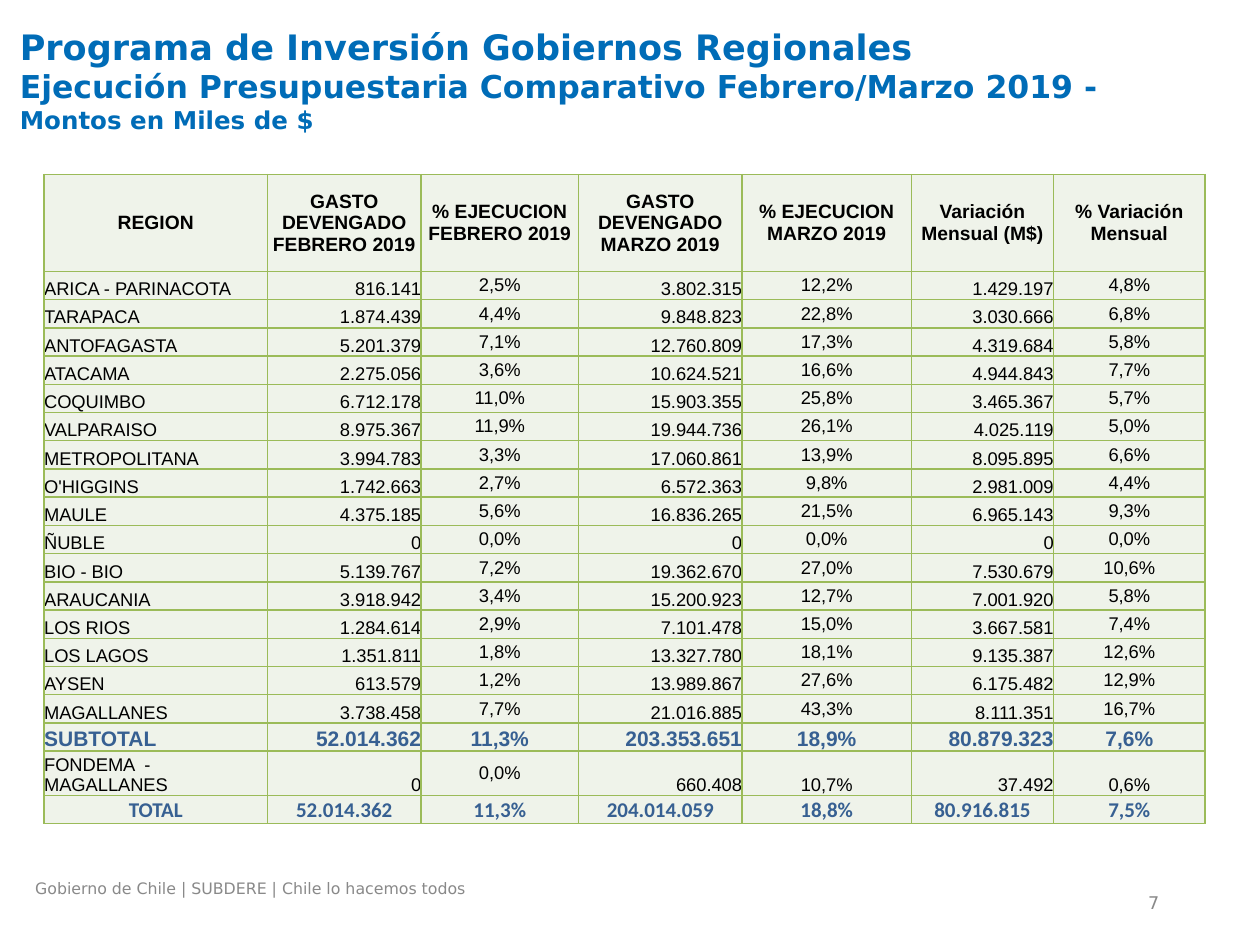
from dataclasses import dataclass
from typing import Optional

import lxml.etree
import pptx
import pptx.dml.color
import pptx.enum.text
import pptx.oxml.ns
import pptx.util

Cm = pptx.util.Cm
Align = pptx.enum.text.PP_ALIGN
Anchor = pptx.enum.text.MSO_ANCHOR


@dataclass(frozen=True)
class Theme:
    title_color: str = "006CB7"
    footer_color: str = "898989"
    text_color: str = "000000"
    total_color: str = "376092"
    cell_fill: str = "EFF3EA"
    border_color: str = "9BBB59"
    border_width: float = 1
    slide_font: str = "DejaVu Sans"
    table_font: str = "Arial"
    total_font: str = "Calibri"
    title_size: float = 20
    subtitle_size: float = 18
    units_size: float = 14
    footer_size: float = 9
    number_size: float = 10
    header_size: float = 11
    body_size: float = 10.5
    total_size: float = 12


THEME = Theme()


@dataclass(frozen=True)
class TextStyle:
    font: str
    size: float
    color: str
    bold: bool = False


@dataclass(frozen=True)
class TextBox:
    left: float
    top: float
    width: float
    height: float
    text: str
    style: TextStyle
    align: Align = Align.LEFT
    anchor: Anchor = Anchor.TOP


@dataclass(frozen=True)
class RowStyle:
    text: TextStyle
    aligns: tuple
    anchors: tuple


# Styles
TITLE = TextStyle(THEME.slide_font, THEME.title_size, THEME.title_color, True)
SUBTITLE = TextStyle(THEME.slide_font, THEME.subtitle_size, THEME.title_color, True)
UNITS = TextStyle(THEME.slide_font, THEME.units_size, THEME.title_color, True)
FOOTER = TextStyle(THEME.slide_font, THEME.footer_size, THEME.footer_color)
NUMBER = TextStyle(THEME.slide_font, THEME.number_size, THEME.footer_color)
BODY = TextStyle(THEME.table_font, THEME.body_size, THEME.text_color)

CENTERED = (Align.CENTER,) * 7
BY_COLUMN = (Align.LEFT,) + (Align.RIGHT, Align.CENTER) * 3
MIDDLE = (Anchor.MIDDLE,) * 7
BOTTOM = (Anchor.BOTTOM,) * 7
PERCENT_MIDDLE = (Anchor.BOTTOM,) + (Anchor.BOTTOM, Anchor.MIDDLE) * 3
FIRST_PERCENT_MIDDLE = BOTTOM[:2] + (Anchor.MIDDLE,) + BOTTOM[3:]

HEADER_ROW = RowStyle(
    TextStyle(THEME.table_font, THEME.header_size, THEME.text_color, True), CENTERED, MIDDLE)
REGION_ROW = RowStyle(BODY, BY_COLUMN, PERCENT_MIDDLE)
SUBTOTAL_ROW = RowStyle(
    TextStyle(THEME.table_font, THEME.total_size, THEME.total_color, True), BY_COLUMN, BOTTOM)
FONDEMA_ROW = RowStyle(BODY, BY_COLUMN, FIRST_PERCENT_MIDDLE)
TOTAL_ROW = RowStyle(
    TextStyle(THEME.total_font, THEME.total_size, THEME.total_color, True), CENTERED, BOTTOM)

# Table content
COLUMN_WIDTHS = (4.5, 3.1, 3.17, 3.3, 3.41, 2.87, 3.05)
HEADER_HEIGHT, ROW_HEIGHT = 1.95, 0.57
HEADERS = (
    "REGION", "GASTO DEVENGADO FEBRERO 2019", "% EJECUCION FEBRERO 2019",
    "GASTO DEVENGADO MARZO 2019", "% EJECUCION MARZO 2019",
    "Variación Mensual (M$)", "% Variación Mensual",
)
REGIONS = (
    ("ARICA - PARINACOTA", "816.141", "2,5%", "3.802.315", "12,2%", "1.429.197", "4,8%"),
    ("TARAPACA", "1.874.439", "4,4%", "9.848.823", "22,8%", "3.030.666", "6,8%"),
    ("ANTOFAGASTA", "5.201.379", "7,1%", "12.760.809", "17,3%", "4.319.684", "5,8%"),
    ("ATACAMA", "2.275.056", "3,6%", "10.624.521", "16,6%", "4.944.843", "7,7%"),
    ("COQUIMBO", "6.712.178", "11,0%", "15.903.355", "25,8%", "3.465.367", "5,7%"),
    ("VALPARAISO", "8.975.367", "11,9%", "19.944.736", "26,1%", "4.025.119", "5,0%"),
    ("METROPOLITANA", "3.994.783", "3,3%", "17.060.861", "13,9%", "8.095.895", "6,6%"),
    ("O'HIGGINS", "1.742.663", "2,7%", "6.572.363", "9,8%", "2.981.009", "4,4%"),
    ("MAULE", "4.375.185", "5,6%", "16.836.265", "21,5%", "6.965.143", "9,3%"),
    ("ÑUBLE", "0", "0,0%", "0", "0,0%", "0", "0,0%"),
    ("BIO - BIO", "5.139.767", "7,2%", "19.362.670", "27,0%", "7.530.679", "10,6%"),
    ("ARAUCANIA", "3.918.942", "3,4%", "15.200.923", "12,7%", "7.001.920", "5,8%"),
    ("LOS RIOS", "1.284.614", "2,9%", "7.101.478", "15,0%", "3.667.581", "7,4%"),
    ("LOS LAGOS", "1.351.811", "1,8%", "13.327.780", "18,1%", "9.135.387", "12,6%"),
    ("AYSEN", "613.579", "1,2%", "13.989.867", "27,6%", "6.175.482", "12,9%"),
    ("MAGALLANES", "3.738.458", "7,7%", "21.016.885", "43,3%", "8.111.351", "16,7%"),
)
SUBTOTAL = ("SUBTOTAL", "52.014.362", "11,3%", "203.353.651", "18,9%", "80.879.323", "7,6%")
FONDEMA = ("FONDEMA  - MAGALLANES", "0", "0,0%", "660.408", "10,7%", "37.492", "0,6%")
TOTAL = ("TOTAL", "52.014.362", "11,3%", "204.014.059", "18,8%", "80.916.815", "7,5%")
TABLE_ROWS = (
    (HEADERS, HEADER_ROW),
    *((region, REGION_ROW) for region in REGIONS),
    (SUBTOTAL, SUBTOTAL_ROW), (FONDEMA, FONDEMA_ROW), (TOTAL, TOTAL_ROW),
)


def rgb(color: str) -> pptx.dml.color.RGBColor:
    return pptx.dml.color.RGBColor.from_string(color)


def format_run(run, style: TextStyle) -> None:
    run.font.name = style.font
    run.font.size = pptx.util.Pt(style.size)
    run.font.bold = style.bold
    run.font.color.rgb = rgb(style.color)


def add_text(slide, box: TextBox):
    shape = slide.shapes.add_textbox(Cm(box.left), Cm(box.top), Cm(box.width), Cm(box.height))
    text_frame = shape.text_frame
    text_frame.word_wrap = True
    text_frame.vertical_anchor = box.anchor
    paragraph = text_frame.paragraphs[0]
    paragraph.text = box.text
    paragraph.alignment = box.align
    for run in paragraph.runs:
        format_run(run, box.style)
    return paragraph


def set_borders(cell) -> None:
    qn = pptx.oxml.ns.qn
    properties = cell._tc.get_or_add_tcPr()
    for position, side in enumerate(("lnL", "lnR", "lnT", "lnB")):
        line = lxml.etree.Element(qn(f"a:{side}"), w=str(pptx.util.Pt(THEME.border_width)))
        fill = lxml.etree.SubElement(line, qn("a:solidFill"))
        lxml.etree.SubElement(fill, qn("a:srgbClr"), val=THEME.border_color)
        properties.insert(position, line)


def fill_cell(cell, text: str, style: TextStyle, align: Optional[Align], anchor: Anchor) -> None:
    cell.margin_left = cell.margin_right = cell.margin_top = cell.margin_bottom = 0
    cell.vertical_anchor = anchor
    cell.fill.solid()
    cell.fill.fore_color.rgb = rgb(THEME.cell_fill)
    set_borders(cell)
    paragraph = cell.text_frame.paragraphs[0]
    paragraph.text = text
    paragraph.alignment = align
    format_run(paragraph.runs[0], style)


def add_budget_table(slide, left: float, top: float) -> None:
    heights = [HEADER_HEIGHT] + [ROW_HEIGHT] * (len(TABLE_ROWS) - 1)
    table = slide.shapes.add_table(
        len(TABLE_ROWS), len(COLUMN_WIDTHS), Cm(left), Cm(top),
        Cm(sum(COLUMN_WIDTHS)), Cm(sum(heights))).table
    table.first_row = table.horz_banding = False
    for column, width in zip(table.columns, COLUMN_WIDTHS):
        column.width = Cm(width)
    for row, height, (values, style) in zip(table.rows, heights, TABLE_ROWS):
        row.height = Cm(height)
        for cell, value, align, anchor in zip(row.cells, values, style.aligns, style.anchors):
            fill_cell(cell, value, style.text, align, anchor)


def main() -> None:
    presentation = pptx.Presentation()
    presentation.slide_width, presentation.slide_height = Cm(25.4), Cm(19.05)
    slide = presentation.slides.add_slide(presentation.slide_layouts[6])

    # Title: one paragraph in three sizes
    title = add_text(slide, TextBox(
        0.15, 0.38, 22.78, 3.18, "Programa de Inversión Gobiernos Regionales\v", TITLE))
    for text, style in (
        ("Ejecución Presupuestaria Comparativo Febrero/Marzo 2019 - ", SUBTITLE),
        ("Montos en Miles de $", UNITS),
    ):
        run = title.add_run()
        run.text = text
        format_run(run, style)

    # Budget table
    add_budget_table(slide, 0.89, 3.52)

    # Footer and page number
    add_text(slide, TextBox(
        0.46, 17.58, 16.46, 0.69, "Gobierno de Chile | SUBDERE | Chile lo hacemos todos", FOOTER))
    add_text(slide, TextBox(
        17.7, 17.93, 5.92, 0.53, "7", NUMBER, Align.RIGHT, Anchor.MIDDLE))

    presentation.save("out.pptx")


if __name__ == "__main__":
    main()
